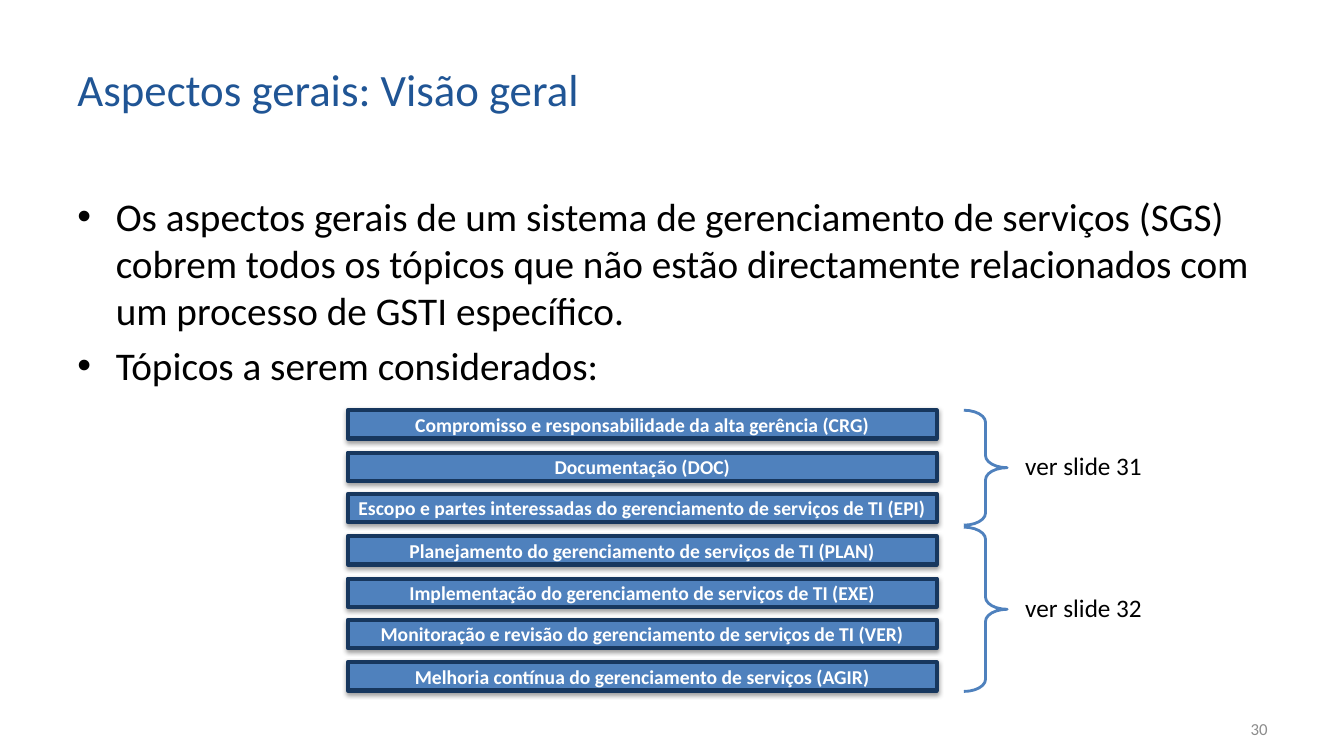
from dataclasses import dataclass

from lxml import etree
from pptx import Presentation
from pptx.dml.color import RGBColor
from pptx.enum.shapes import MSO_SHAPE
from pptx.enum.text import MSO_ANCHOR, PP_ALIGN
from pptx.oxml.ns import qn
from pptx.util import Emu, Pt

RECTANGLE = MSO_SHAPE.RECTANGLE
RIGHT_BRACE = MSO_SHAPE.RIGHT_BRACE
TOP, MIDDLE = MSO_ANCHOR.TOP, MSO_ANCHOR.MIDDLE
LEFT, CENTER, RIGHT = PP_ALIGN.LEFT, PP_ALIGN.CENTER, PP_ALIGN.RIGHT

EMU_PER_PX = 9144  # 100 px to the inch
FONT = "Calibri"
BLACK, WHITE, GRAY = "000000", "FFFFFF", "8C8C8C"
TITLE_BLUE, BLUE, NAVY = "205595", "4F81BD", "17375E"

BAR_LEFT, BAR_WIDTH, BAR_HEIGHT = 345, 584, 28
FIRST_BAR_TOP, LAST_BAR_TOP = 407, 657
BRACE_LEFT, BRACE_WIDTH = 956, 43
BULLET_INDENT = 38


@dataclass(frozen=True)
class Area:
    left: int
    top: int
    width: int
    height: int


@dataclass(frozen=True)
class TextStyle:
    size: int
    color: str
    bold: bool = False
    align: PP_ALIGN = LEFT
    anchor: MSO_ANCHOR = TOP


@dataclass(frozen=True)
class Reference:
    label: str
    label_top: int
    brace_top: int
    brace_height: int


TITLE_STYLE = TextStyle(32, TITLE_BLUE, anchor=MIDDLE)
BODY_STYLE = TextStyle(28, BLACK)
BAR_STYLE = TextStyle(14, WHITE, bold=True, align=CENTER, anchor=MIDDLE)
LABEL_STYLE = TextStyle(18, BLACK)
NUMBER_STYLE = TextStyle(12, GRAY, align=RIGHT, anchor=MIDDLE)

BODY = [
    "Os aspectos gerais de um sistema de gerenciamento de serviços (SGS) cobrem todos os "
    "tópicos que não estão directamente relacionados com um processo de GSTI específico.",
    "Tópicos a serem considerados:",
]
TOPICS = [
    "Compromisso e responsabilidade da alta gerência (CRG)",
    "Documentação (DOC)",
    "Escopo e partes interessadas do gerenciamento de serviços de TI (EPI)",
    "Planejamento do gerenciamento de serviços de TI (PLAN)",
    "Implementação do gerenciamento de serviços de TI (EXE)",
    "Monitoração e revisão do gerenciamento de serviços de TI (VER)",
    "Melhoria contínua do gerenciamento de serviços (AGIR)",
]
REFERENCES = [
    Reference("ver slide 31", 442, 407, 114),
    Reference("ver slide 32", 583, 523, 163),
]


def px(length: int) -> Emu:
    return Emu(length * EMU_PER_PX)


def rgb(color: str) -> RGBColor:
    return RGBColor.from_string(color)


def bounds(area: Area) -> tuple[Emu, Emu, Emu, Emu]:
    return px(area.left), px(area.top), px(area.width), px(area.height)


def write_text(shape, text: str, style: TextStyle, wrap: bool = True) -> None:
    frame = shape.text_frame
    frame.text = text
    frame.word_wrap = wrap
    frame.vertical_anchor = style.anchor
    for para in frame.paragraphs:
        para.alignment = style.align
        for span in para.runs:
            span.font.name = FONT
            span.font.size = Pt(style.size)
            span.font.bold = style.bold
            span.font.color.rgb = rgb(style.color)


def add_text(page, area: Area, text: str, style: TextStyle):
    box = page.shapes.add_textbox(*bounds(area))
    write_text(box, text, style)
    return box


def add_bullets(page, area: Area, items: list[str], style: TextStyle) -> None:
    box = add_text(page, area, "\n".join(items), style)
    for index, para in enumerate(box.text_frame.paragraphs):
        if index:
            para.space_before = Pt(style.size * 0.2)
        properties = para._p.get_or_add_pPr()
        properties.set("marL", str(px(BULLET_INDENT)))
        properties.set("indent", str(-px(BULLET_INDENT)))
        etree.SubElement(properties, qn("a:buFont"), typeface="Arial")
        etree.SubElement(properties, qn("a:buChar"), char="•")


def add_soft_shadow(shape) -> None:
    effects = shape._element.spPr.find(qn("a:effectLst"))
    shadow = etree.SubElement(effects, qn("a:outerShdw"), blurRad="40000", dist="20000",
                              dir="5400000", rotWithShape="0")
    color = etree.SubElement(shadow, qn("a:srgbClr"), val=BLACK)
    etree.SubElement(color, qn("a:alpha"), val="38000")


def add_outlined(page, kind: MSO_SHAPE, area: Area, line: str, weight: int):
    shape = page.shapes.add_shape(kind, *bounds(area))
    shape.shadow.inherit = False
    shape.line.color.rgb = rgb(line)
    shape.line.width = Pt(weight)
    return shape


def add_topic_bar(page, top: int, topic: str) -> None:
    bar = add_outlined(page, RECTANGLE, Area(BAR_LEFT, top, BAR_WIDTH, BAR_HEIGHT), NAVY, 3)
    bar.fill.solid()
    bar.fill.fore_color.rgb = rgb(BLUE)
    add_soft_shadow(bar)
    write_text(bar, topic, BAR_STYLE, wrap=False)


def add_reference(page, reference: Reference) -> None:
    """Add a brace around a group of topics and the slide it points to."""
    area = Area(BRACE_LEFT, reference.brace_top, BRACE_WIDTH, reference.brace_height)
    brace = add_outlined(page, RIGHT_BRACE, area, BLUE, 2)
    brace.fill.background()
    brace.adjustments[0] = 0.28
    add_text(page, Area(1007, reference.label_top, 162, 40), reference.label, LABEL_STYLE)


def main() -> None:
    deck = Presentation()
    deck.slide_width, deck.slide_height = px(1333), px(750)
    page = deck.slides.add_slide(deck.slide_layouts[6])

    add_text(page, Area(67, 30, 991, 115), "Aspectos gerais: Visão geral", TITLE_STYLE)
    add_bullets(page, Area(67, 186, 1200, 506), BODY, BODY_STYLE)
    add_text(page, Area(956, 703, 311, 40), "30", NUMBER_STYLE)

    pitch = (LAST_BAR_TOP - FIRST_BAR_TOP) / (len(TOPICS) - 1)
    for index, topic in enumerate(TOPICS):
        add_topic_bar(page, FIRST_BAR_TOP + round(index * pitch), topic)
    for reference in REFERENCES:
        add_reference(page, reference)

    deck.save("out.pptx")


if __name__ == "__main__":
    main()
